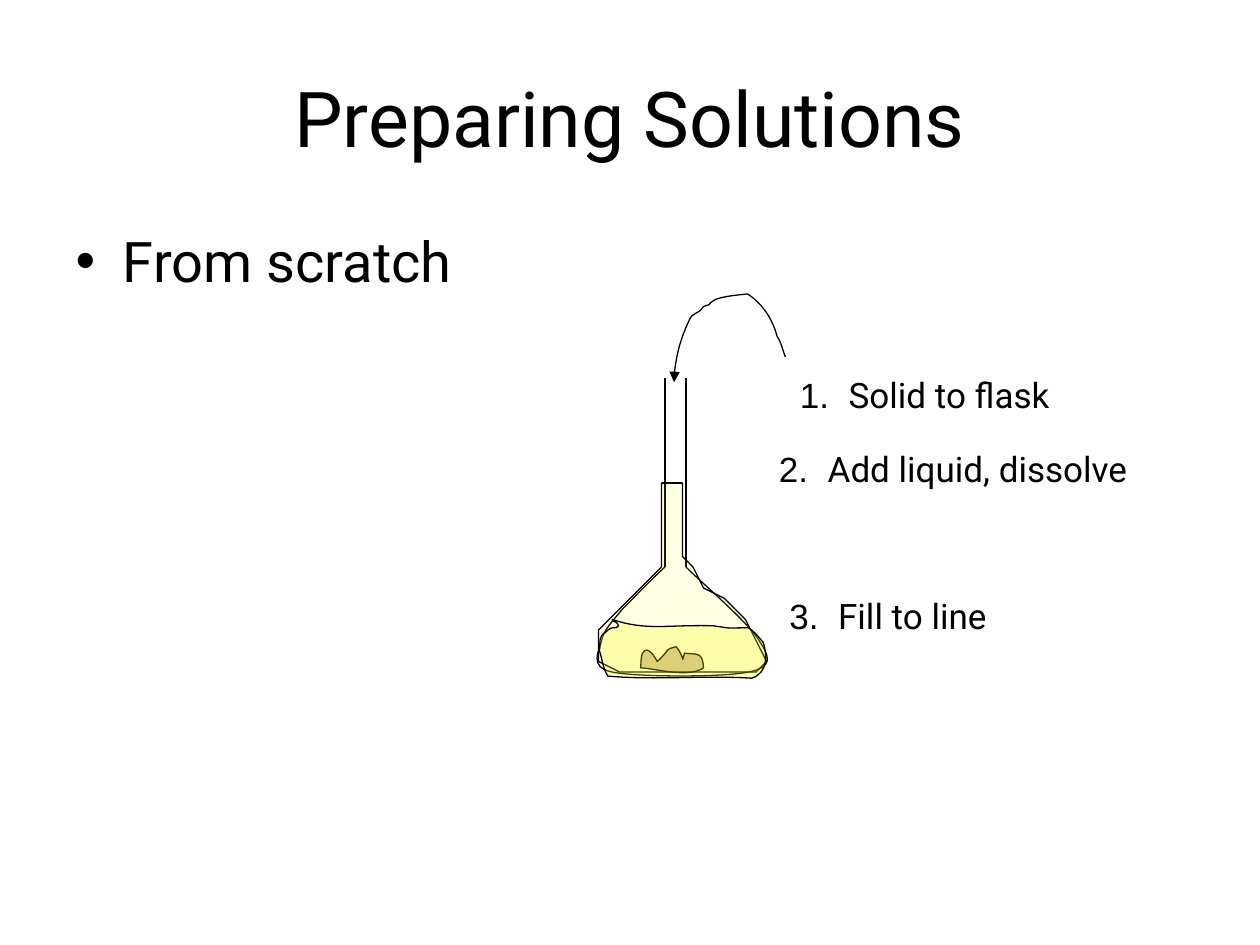
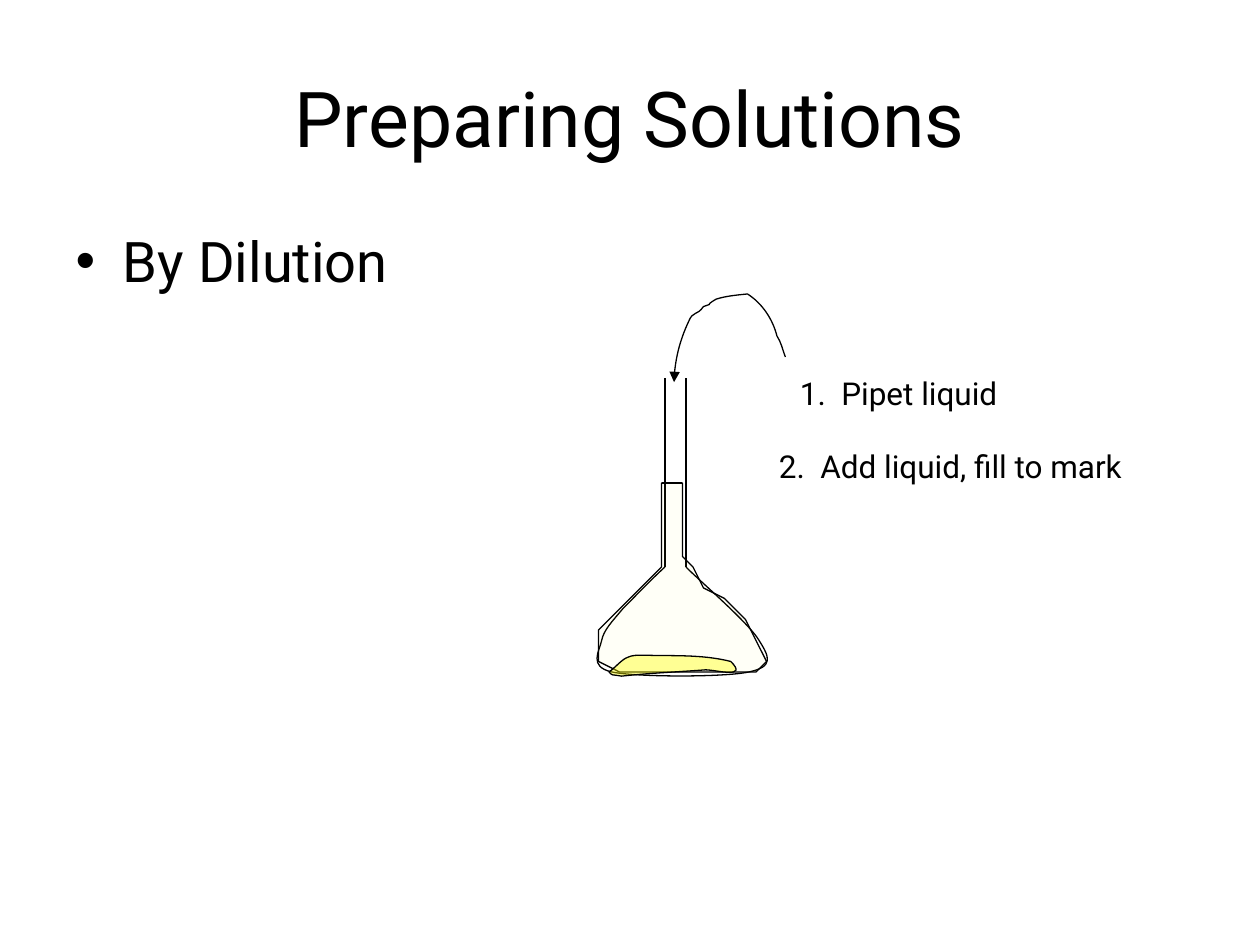
from lxml.etree import SubElement
from pptx import Presentation
from pptx.dml.color import RGBColor
from pptx.enum.shapes import MSO_CONNECTOR as Connector
from pptx.enum.text import MSO_ANCHOR as Anchor, MSO_AUTO_SIZE as AutoSize, PP_ALIGN as Align
from pptx.oxml.ns import qn
from pptx.util import Emu, Inches, Pt

COLORS = {"ink": "000000", "liquid": "FFFF00", "solid": "663300"}
FONT = "Roboto"
LINE_WIDTH = Pt(0.75)

# Grid of 120 columns by 90 rows; every length below is in cells
deck = Presentation()
deck.slide_width, deck.slide_height = Inches(10), Inches(7.5)
CELL = deck.slide_width // 120
TITLE_AREA = (6, 3.6, 108, 15)
BODY_AREA = (6, 21, 108, 59.4)

# Lines of the flask: neck walls and fill mark
NECK_LEFT, NECK_RIGHT = 63.33, 65.33
FLASK_LINES = [(NECK_LEFT, 36, NECK_LEFT, 54), (NECK_RIGHT, 36, NECK_RIGHT, 54),
               (63, 46, 65, 46)]

# Outlines: a pair is a corner, six numbers are a curve (two controls, end)
FLASK = [(NECK_LEFT, 54), (61.8, 55.4, 60.4, 56.9, 59.3, 58),
         (58.3, 59.2, 57.5, 60, 57.3, 61), (57.1, 62, 56, 63.5, 58.3, 64),
         (60.7, 64.5, 69, 64.5, 71.3, 64), (73.7, 63.5, 73.3, 62.6, 72.3, 61),
         (71.3, 59.3, 66.5, 55.2, NECK_RIGHT, 54)]
POUR_ARROW = [(74.8, 34), (74.5, 33.2, 74.4, 32.6, 74, 32),
              (73.6, 30.4, 72.6, 28.9, 71.2, 28), (70.2, 28.1, 69.1, 28.2, 68.2, 28.5),
              (66.7, 29.4, 68.4, 28.7, 67, 29.2), (66.4, 30.1, 66, 29.6, 65.6, 30.6),
              (64.8, 32.3, 64.2, 34.6, 64.2, 36.4)]
FILLED = [(65, 46), (63, 46), (63, 54), (57, 60), (57, 63), (59, 64), (64, 64),
          (69, 64), (72, 64), (73, 63), (72, 61), (71, 59), (69, 57), (67, 56),
          (66, 54), (65, 53), (65, 46)]
CRYSTALS = [(61, 63.6), (61.1, 63.1, 61, 62.6, 61.2, 62.2),
            (61.7, 61.3, 62.5, 62.8, 62.6, 63), (64, 61.7, 63.2, 61.9, 64.4, 61.6),
            (64.6, 61.8, 64.7, 62, 64.8, 62.2), (65.2, 62.9, 64.9, 63.1, 65.2, 62.2),
            (65.6, 62.3, 66.2, 62.2, 66.6, 62.4), (67, 62.6, 67, 63.6, 67, 63.6),
            (65.6, 64.6, 62.6, 63.7, 61, 63.6)]
SOLVENT = [(58.3, 59), (61.6, 60.1, 63.4, 59.5, 67.9, 59.6),
           (70, 59.9, 68.8, 59.8, 71.3, 59.8), (71.9, 60.2, 72.2, 60.6, 72.7, 61.2),
           (73.1, 62.5, 73.1, 64.1, 71.6, 64.6), (67.1, 64.3, 62.5, 64.8, 57.9, 64.4),
           (57.4, 63.6, 57.4, 62.9, 57.1, 62), (57.2, 60.8, 57, 60.7, 57.7, 60.2),
           (57.8, 60, 58.1, 59.9, 58.3, 59.8), (58.4, 59.8, 58.9, 59.8, 58.9, 59.6),
           (58.9, 59.3, 58.4, 59.2, 58.3, 59)]
PIPETTED = [(58, 64), (58.6, 63.6, 59.2, 62.8, 59.8, 62.6),
            (60.2, 62.4, 60.7, 62.4, 61.2, 62.4), (64.1, 62.5, 66.8, 62.3, 69.6, 63),
            (71.3, 64.7, 68.2, 63.8, 67.2, 63.8), (64.6, 64, 61.9, 64.1, 59.2, 64.4),
            (58.1, 64.2, 58.4, 64.4, 58, 64)]

# What differs between the slides: fills are (outline, colour, opacity %),
# steps are (text, column, row, width)
METHODS = [
    {"name": "From scratch", "size": 20, "number_font": "Arial",
     "indent": 4.65, "height": 5.2,
     "fills": [(FILLED, "liquid", 10), (CRYSTALS, "solid", 30), (SOLVENT, "liquid", 25)],
     "steps": [("Solid to flask", 75, 35, 29), ("Add liquid, dissolve", 73, 42, 37),
               ("Fill to line", 74, 56, 29)]},
    {"name": "By Dilution", "size": 18, "number_font": FONT,
     "indent": 3.95, "height": 4.8,
     "fills": [(FILLED, "liquid", 3), (PIPETTED, "liquid", 40)],
     "steps": [("Pipet liquid", 75, 35, 29), ("Add liquid, fill to mark", 73, 42, 40)]},
]


def write(para, text, size=20, font=FONT, color="ink"):
    span = para.add_run()
    span.text = text
    span.font.size, span.font.name = Pt(size), font
    span.font.color.rgb = RGBColor.from_string(COLORS[color])


def draw_outline(page, outline, color=None, opacity=100):
    points = [(round(x * CELL), round(y * CELL))
              for segment in outline for x, y in zip(segment[::2], segment[1::2])]
    builder = page.shapes.build_freeform(*points[0])
    builder.add_line_segments(points[1:], close=color is not None)
    shape = builder.convert_to_shape()

    # Join the three points of each curve into one Bézier segment
    nodes = iter(list(shape._element.iter(qn("a:lnTo"))))
    for segment in outline[1:]:
        first = next(nodes)
        if len(segment) == 6:
            first.tag = qn("a:cubicBezTo")
            for node in (next(nodes), next(nodes)):
                first.append(node[0])
                node.getparent().remove(node)

    shape.shadow.inherit = False
    shape.line.width = LINE_WIDTH
    shape.line.color.rgb = RGBColor.from_string(COLORS["ink"])
    if color is None:
        shape.fill.background()
    else:
        shape.fill.solid()
        shape.fill.fore_color.rgb = RGBColor.from_string(COLORS[color])
        tint = shape.fill._xPr.find(".//" + qn("a:srgbClr"))
        SubElement(tint, qn("a:alpha"), val=str(opacity * 1000))
    return shape


for method in METHODS:
    page = deck.slides.add_slide(deck.slide_layouts[1])

    # Title and bullet
    title, body = page.placeholders
    for holder, area in ((title, TITLE_AREA), (body, BODY_AREA)):
        holder.left, holder.top, holder.width, holder.height = (
            Emu(round(length * CELL)) for length in area)
    title.text_frame.vertical_anchor = Anchor.MIDDLE
    title.text_frame.paragraphs[0].alignment = Align.CENTER
    write(title.text_frame.paragraphs[0], "Preparing Solutions", size=44)
    write(body.text_frame.paragraphs[0], method["name"], size=32)

    # Empty flask
    for ends in FLASK_LINES:
        line = page.shapes.add_connector(
            Connector.STRAIGHT, *(Emu(round(end * CELL)) for end in ends))
        line.line.width = LINE_WIDTH
        line.line.color.rgb = RGBColor.from_string(COLORS["ink"])
        SubElement(line._element.spPr, qn("a:effectLst"))
    draw_outline(page, FLASK)

    # Arrow into the neck
    arrow = draw_outline(page, POUR_ARROW)
    SubElement(arrow.line._get_or_add_ln(), qn("a:tailEnd"), type="triangle")

    # Contents
    for outline, color, opacity in method["fills"]:
        draw_outline(page, outline, color, opacity)

    # Numbered steps with a hanging indent
    for number, (text, column, row, width) in enumerate(method["steps"], 1):
        box = page.shapes.add_textbox(*(
            Emu(round(length * CELL)) for length in (column, row, width, method["height"])))
        box.text_frame.word_wrap = True
        box.text_frame.auto_size = AutoSize.SHAPE_TO_FIT_TEXT
        para = box.text_frame.paragraphs[0]
        indent = round(method["indent"] * CELL)
        para._p.get_or_add_pPr().set("marL", str(indent))
        para._p.get_or_add_pPr().set("indent", str(-indent))
        write(para, f"{number}.\t", size=method["size"], font=method["number_font"])
        write(para, text, size=method["size"])

deck.save("out.pptx")
